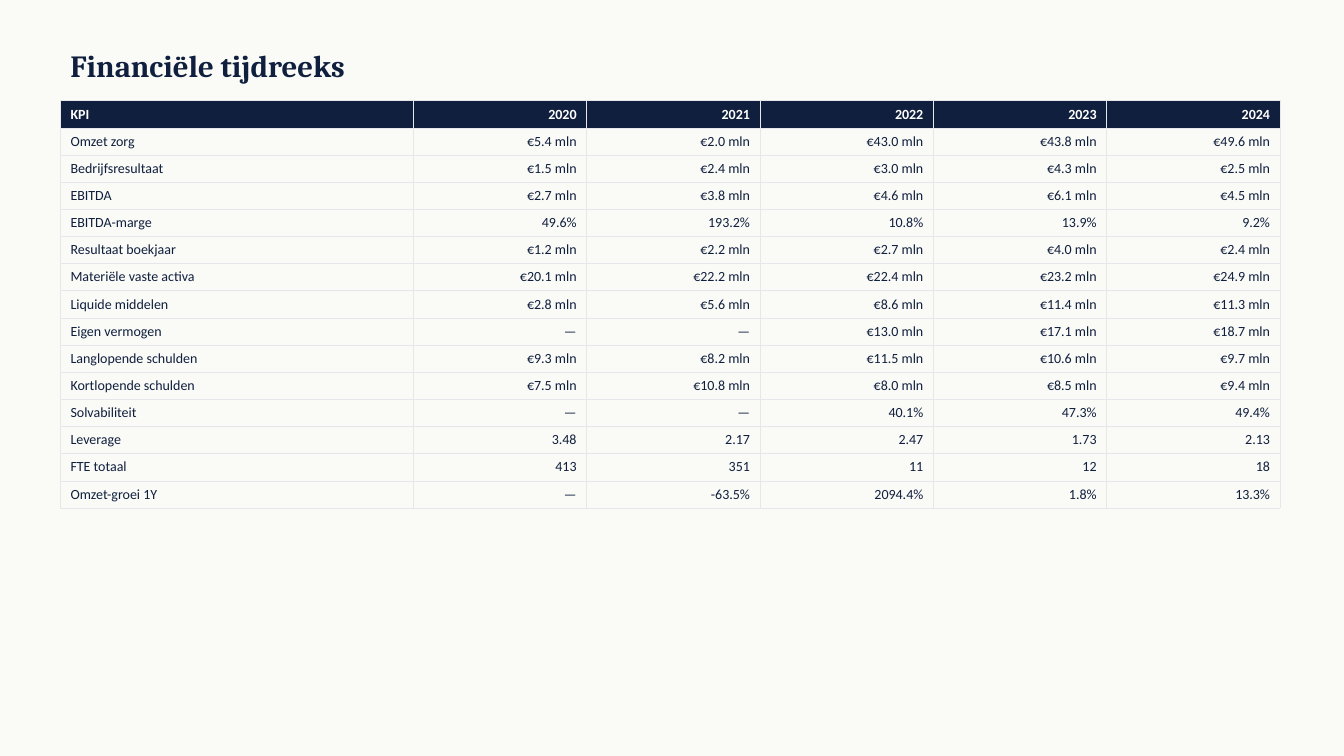
from dataclasses import dataclass

from lxml.etree import SubElement
from pptx import Presentation
from pptx.dml.color import RGBColor
from pptx.enum.text import MSO_ANCHOR, PP_ALIGN
from pptx.oxml.ns import qn
from pptx.util import Pt


@dataclass(frozen=True)
class Theme:
    background: str = "FAFAF7"
    navy: str = "0F1F3D"
    white: str = "FFFFFF"
    grid: str = "E5E7EB"
    title_font: str = "Cambria"
    body_font: str = "Calibri"
    title_size: float = 22
    body_size: float = 10
    grid_width: float = 0.5


THEME = Theme()
LEFT = 43.2
KPI_WIDTH, YEAR_WIDTH, ROW_HEIGHT = 252, 123.84, 19.4

HEADER = ("KPI", "2020", "2021", "2022", "2023", "2024")
KPIS = (
    ("Omzet zorg", "€5.4 mln", "€2.0 mln", "€43.0 mln", "€43.8 mln", "€49.6 mln"),
    ("Bedrijfsresultaat", "€1.5 mln", "€2.4 mln", "€3.0 mln", "€4.3 mln", "€2.5 mln"),
    ("EBITDA", "€2.7 mln", "€3.8 mln", "€4.6 mln", "€6.1 mln", "€4.5 mln"),
    ("EBITDA-marge", "49.6%", "193.2%", "10.8%", "13.9%", "9.2%"),
    ("Resultaat boekjaar", "€1.2 mln", "€2.2 mln", "€2.7 mln", "€4.0 mln", "€2.4 mln"),
    ("Materiële vaste activa", "€20.1 mln", "€22.2 mln", "€22.4 mln", "€23.2 mln", "€24.9 mln"),
    ("Liquide middelen", "€2.8 mln", "€5.6 mln", "€8.6 mln", "€11.4 mln", "€11.3 mln"),
    ("Eigen vermogen", "—", "—", "€13.0 mln", "€17.1 mln", "€18.7 mln"),
    ("Langlopende schulden", "€9.3 mln", "€8.2 mln", "€11.5 mln", "€10.6 mln", "€9.7 mln"),
    ("Kortlopende schulden", "€7.5 mln", "€10.8 mln", "€8.0 mln", "€8.5 mln", "€9.4 mln"),
    ("Solvabiliteit", "—", "—", "40.1%", "47.3%", "49.4%"),
    ("Leverage", "3.48", "2.17", "2.47", "1.73", "2.13"),
    ("FTE totaal", "413", "351", "11", "12", "18"),
    ("Omzet-groei 1Y", "—", "-63.5%", "2094.4%", "1.8%", "13.3%"),
)


def add_run(paragraph, text, font, size, color, bold):
    run = paragraph.add_run()
    run.text = text
    run.font.name = font
    run.font.size = Pt(size)
    run.font.bold = bold
    run.font.color.rgb = RGBColor.from_string(color)


def add_title(slide, text):
    title = slide.shapes.add_textbox(Pt(LEFT), Pt(28.8), Pt(864), Pt(36))
    frame = title.text_frame
    frame.word_wrap = True
    frame.vertical_anchor = MSO_ANCHOR.MIDDLE
    add_run(frame.paragraphs[0], text, THEME.title_font, THEME.title_size, THEME.navy, True)


def add_borders(cell):
    """Draw all four sides; call before filling, as the schema puts lines first."""
    properties = cell._tc.get_or_add_tcPr()
    for side in ("a:lnL", "a:lnR", "a:lnT", "a:lnB"):
        line = SubElement(properties, qn(side), w=str(Pt(THEME.grid_width)))
        solid = SubElement(line, qn("a:solidFill"))
        SubElement(solid, qn("a:srgbClr"), val=THEME.grid)


def fill_cell(cell, text, is_header, is_label):
    add_borders(cell)
    if is_header:
        cell.fill.solid()
        cell.fill.fore_color.rgb = RGBColor.from_string(THEME.navy)
    else:
        cell.fill.background()
    paragraph = cell.text_frame.paragraphs[0]
    paragraph.alignment = PP_ALIGN.LEFT if is_label else PP_ALIGN.RIGHT
    color = THEME.white if is_header else THEME.navy
    add_run(paragraph, text, THEME.body_font, THEME.body_size, color, is_header)


def add_kpi_table(slide, rows):
    widths = [KPI_WIDTH] + [YEAR_WIDTH] * (len(HEADER) - 1)
    table = slide.shapes.add_table(
        len(rows), len(widths), Pt(LEFT), Pt(72), Pt(sum(widths)), Pt(ROW_HEIGHT * len(rows))
    ).table
    table.horz_banding = False
    for column, width in zip(table.columns, widths):
        column.width = Pt(width)
    for row_index, (row, values) in enumerate(zip(table.rows, rows)):
        row.height = Pt(ROW_HEIGHT)
        for column_index, (cell, value) in enumerate(zip(row.cells, values)):
            fill_cell(cell, value, row_index == 0, column_index == 0)


def main():
    presentation = Presentation()
    presentation.slide_width, presentation.slide_height = Pt(960), Pt(540)
    slide = presentation.slides.add_slide(presentation.slide_layouts[6])
    slide.background.fill.solid()
    slide.background.fill.fore_color.rgb = RGBColor.from_string(THEME.background)
    add_title(slide, "Financiële tijdreeks")
    add_kpi_table(slide, (HEADER, *KPIS))
    presentation.save("out.pptx")


if __name__ == "__main__":
    main()
